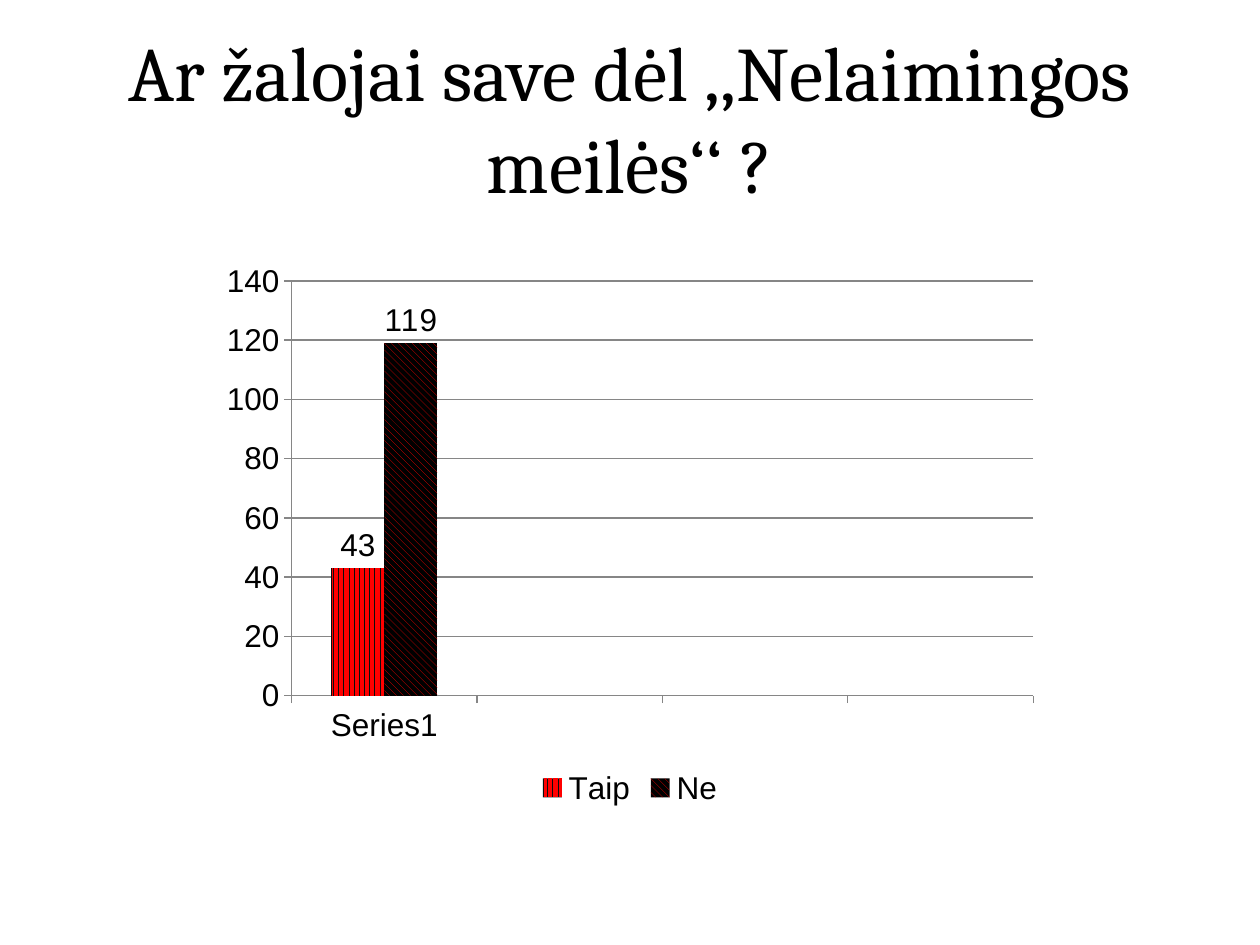
import dataclasses

import pptx
import pptx.chart.data
import pptx.chart.series
import pptx.dml.color
import pptx.enum.chart
import pptx.enum.dml
import pptx.enum.text
import pptx.util

Pt = pptx.util.Pt
PATTERN = pptx.enum.dml.MSO_PATTERN
CHART = pptx.enum.chart


@dataclasses.dataclass(frozen=True)
class Answer:
    name: str
    count: int
    pattern: PATTERN
    fore: str
    back: str


ANSWERS = [
    Answer("Taip", 43, PATTERN.DARK_VERTICAL, "FF0000", "0D0D0D"),
    Answer("Ne", 119, PATTERN.WIDE_DOWNWARD_DIAGONAL, "FF0000", "000000"),
]
CATEGORIES = ["Series1", "", "", ""]


def set_color(color: pptx.dml.color.ColorFormat, value: str) -> None:
    color.rgb = pptx.dml.color.RGBColor.from_string(value)


def add_title(s: pptx.slide.Slide, text: str) -> None:
    sp = s.shapes.title
    sp.left, sp.top, sp.width, sp.height = Pt(36), Pt(21.6), Pt(648), Pt(90)
    tf = sp.text_frame
    tf.text = text
    tf.vertical_anchor = pptx.enum.text.MSO_ANCHOR.MIDDLE
    p = tf.paragraphs[0]
    p.alignment = pptx.enum.text.PP_ALIGN.CENTER
    p.font.size = Pt(44)
    p.font.name = "Cambria"
    set_color(p.font.color, "000000")


def format_series(series: pptx.chart.series.BarSeries, answer: Answer) -> None:
    fill = series.format.fill
    fill.patterned()
    fill.pattern = answer.pattern
    set_color(fill.fore_color, answer.fore)
    set_color(fill.back_color, answer.back)
    series.invert_if_negative = False
    labels = series.data_labels
    labels.show_value = True
    labels.position = CHART.XL_LABEL_POSITION.OUTSIDE_END


def add_answer_chart(s: pptx.slide.Slide, answers: list[Answer]) -> None:
    data = pptx.chart.data.CategoryChartData()
    data.categories = CATEGORIES
    for answer in answers:
        data.add_series(answer.name, [answer.count] + [None] * (len(CATEGORIES) - 1))
    chart = s.shapes.add_chart(
        CHART.XL_CHART_TYPE.COLUMN_CLUSTERED,
        Pt(120), Pt(144), Pt(480), Pt(320), data,
    ).chart
    chart.has_title = False
    chart.font.name = "Arial"
    chart.font.size = Pt(18)
    set_color(chart.font.color, "000000")
    chart.has_legend = True
    chart.legend.position = CHART.XL_LEGEND_POSITION.BOTTOM
    chart.legend.include_in_layout = False

    plot = chart.plots[0]
    plot.gap_width = 150
    plot.overlap = 0
    plot.vary_by_categories = False
    for series, answer in zip(plot.series, answers):
        format_series(series, answer)

    value_axis = chart.value_axis
    value_axis.minimum_scale = 0
    value_axis.maximum_scale = 140
    value_axis.major_unit = 20
    value_axis.has_major_gridlines = True
    for axis in (chart.category_axis, value_axis):
        axis.major_tick_mark = CHART.XL_TICK_MARK.OUTSIDE
    for line in (
        chart.category_axis.format.line,
        value_axis.format.line,
        value_axis.major_gridlines.format.line,
    ):
        line.width = Pt(0.75)
        set_color(line.color, "868686")


def main() -> None:
    prs = pptx.Presentation()
    prs.slide_width, prs.slide_height = Pt(720), Pt(540)
    s = prs.slides.add_slide(prs.slide_layouts[5])
    add_title(s, "Ar žalojai save dėl ,,Nelaimingos meilės‘‘ ?")
    add_answer_chart(s, ANSWERS)
    prs.save("out.pptx")


if __name__ == "__main__":
    main()
